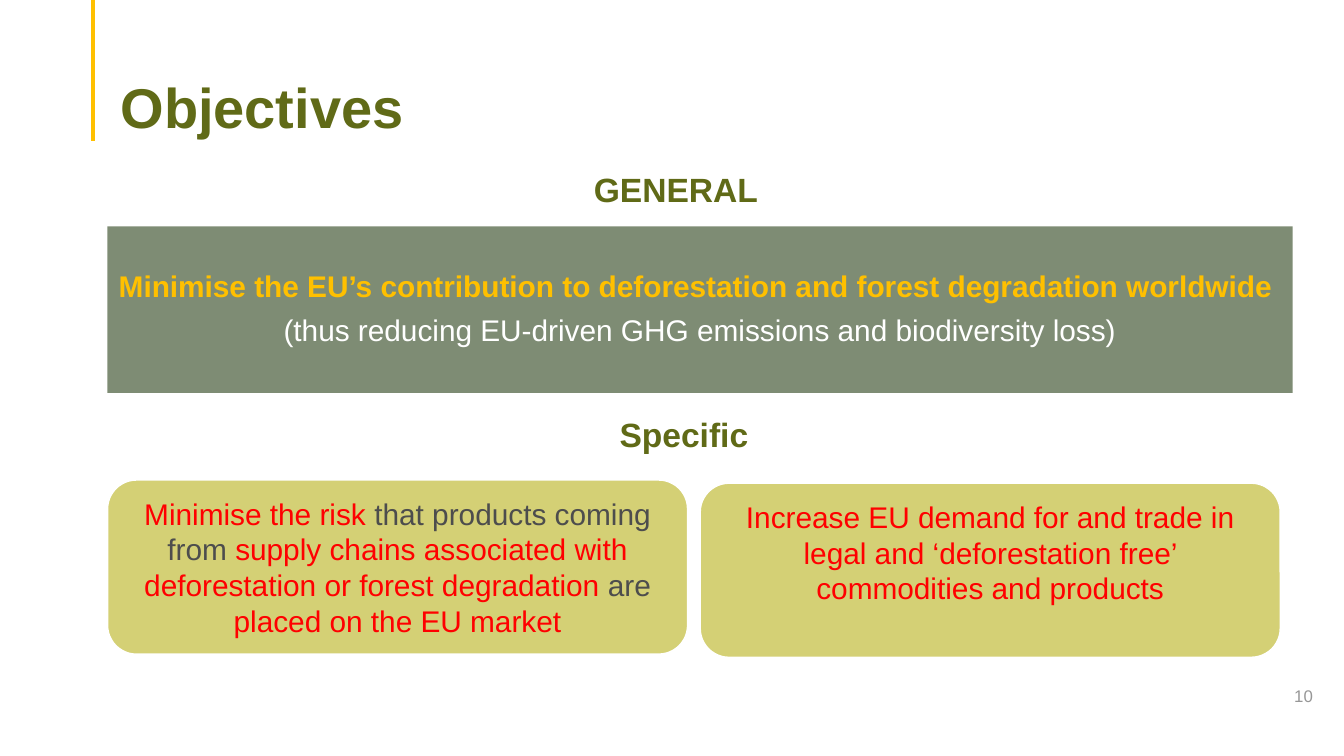
"""Build the Objectives slide with its general and specific goals."""
from typing import NamedTuple, Optional

from lxml.etree import SubElement
from pptx import Presentation
from pptx.dml.color import RGBColor as Rgb
from pptx.enum.shapes import MSO_CONNECTOR as Link, MSO_SHAPE as Form
from pptx.enum.text import MSO_ANCHOR as Anchor, PP_ALIGN as Align
from pptx.oxml.ns import qn
from pptx.util import Cm, Pt


class Theme(NamedTuple):
    font: str = "Arial"
    olive: str = "606A17"
    gold: str = "FFC000"
    sage: str = "7E8C74"
    lime: str = "D4D075"
    red: str = "FF0000"
    dark: str = "4D4D4D"
    pale: str = "979797"
    white: str = "FFFFFF"
    title: int = 30
    head: int = 18
    body: int = 16
    note: int = 9


class Run(NamedTuple):
    text: str
    tint: str
    size: int
    bold: bool = False


class Box(NamedTuple):
    left: float
    top: float
    wide: float
    high: float
    lines: list[list[Run]]
    form: Optional[Form] = None
    fill: str = ""
    edge: str = ""
    align: Align = Align.CENTER
    anchor: Anchor = Anchor.TOP
    inset: tuple[float, float, float, float] = (0.25, 0.13, 0.25, 0.13)
    pitch: float = 1.0
    after: float = 0


T = Theme()


def write(frame, box: Box) -> None:
    """Fill a text frame run by run."""
    frame.word_wrap = True
    frame.vertical_anchor = box.anchor
    (frame.margin_left, frame.margin_top,
     frame.margin_right, frame.margin_bottom) = map(Cm, box.inset)
    for i, line in enumerate(box.lines):
        para = frame.add_paragraph() if i else frame.paragraphs[0]
        para.alignment = box.align
        para.line_spacing = box.pitch
        para.space_after = Pt(box.after)
        for part in line:
            run = para.add_run()
            run.text = part.text
            font = run.font
            font.name, font.size, font.bold = T.font, Pt(part.size), part.bold
            font.color.rgb = Rgb.from_string(part.tint)


def draw(slide, box: Box) -> None:
    """Draw a box as a plain text box or a filled shape."""
    place = [Cm(n) for n in box[:4]]
    if box.form is None:
        shape = slide.shapes.add_textbox(*place)
    else:
        shape = slide.shapes.add_shape(box.form, *place)
        shape.shadow.inherit = False
        shape.fill.solid()
        shape.fill.fore_color.rgb = Rgb.from_string(box.fill)
        if box.edge:
            shape.line.color.rgb = Rgb.from_string(box.edge)
            shape.line.width = Pt(1)
        else:
            shape.line.fill.background()
    write(shape.text_frame, box)


def rule(slide, left: float, end: float) -> None:
    """Draw the gold rule down from the top edge."""
    line = slide.shapes.add_connector(Link.STRAIGHT, Cm(left), 0, Cm(left), Cm(end))
    line.line.color.rgb = Rgb.from_string(T.gold)
    line.line.width = Pt(2.25)
    SubElement(line._element.spPr, qn("a:effectLst"))


def head(text: str, top: float, wide: float) -> Box:
    """Return a section heading."""
    return Box(10.54, top, wide, 1.02, [[Run(text, T.olive, T.head, True)]])


def card(left: float, top: float, *runs: Run) -> Box:
    """Return a rounded card for a specific goal."""
    return Box(left, top, 10.97, 3.3, [list(runs)], Form.ROUNDED_RECTANGLE, T.lime, T.white)


def red(text: str) -> Run:
    """Return a stressed body run."""
    return Run(text, T.red, T.body)


def dark(text: str) -> Run:
    """Return a plain body run."""
    return Run(text, T.dark, T.body)


def main() -> None:
    """Build and save the slide."""
    deck = Presentation()
    deck.slide_width, deck.slide_height = Cm(25.4), Cm(14.29)
    slide = deck.slides.add_slide(deck.slide_layouts[6])
    rule(slide, 1.75, 2.67)
    goal = [
        [Run("Minimise the EU’s contribution to deforestation and forest degradation worldwide ",
             T.gold, T.body, True)],
        [Run("(thus reducing EU-driven GHG emissions and biodiversity loss)", T.white, T.body)],
    ]
    boxes = [
        Box(24.21, 12.78, 1.5, 0.76, [[Run("10", T.pale, T.note)]],
            align=Align.LEFT, anchor=Anchor.MIDDLE),
        Box(2.03, 1.02, 21.89, 1.63, [[Run("Objectives", T.olive, T.title, True)]],
            align=Align.LEFT, anchor=Anchor.BOTTOM, inset=(0.25, 0.13, 0.25, 0), pitch=0.9),
        Box(2.03, 4.28, 22.4, 3.15, goal, Form.RECTANGLE, T.sage, anchor=Anchor.MIDDLE,
            inset=(0.18, 0.08, 0.18, 0.08), pitch=0.9, after=6),
        head("Specific ", 7.7, 4.95),
        card(2.03, 9.07, red("Minimise the risk "), dark("that products coming from "),
             red("supply chains associated with deforestation or forest degradation "),
             dark("are "), red("placed on the EU market")),
        head("GENERAL", 3.07, 4.47),
        card(13.23, 9.13, red("Increase EU demand for and trade in legal and "
                              "‘deforestation free’ commodities and products")),
    ]
    for box in boxes:
        draw(slide, box)
    deck.save("out.pptx")


if __name__ == "__main__":
    main()
